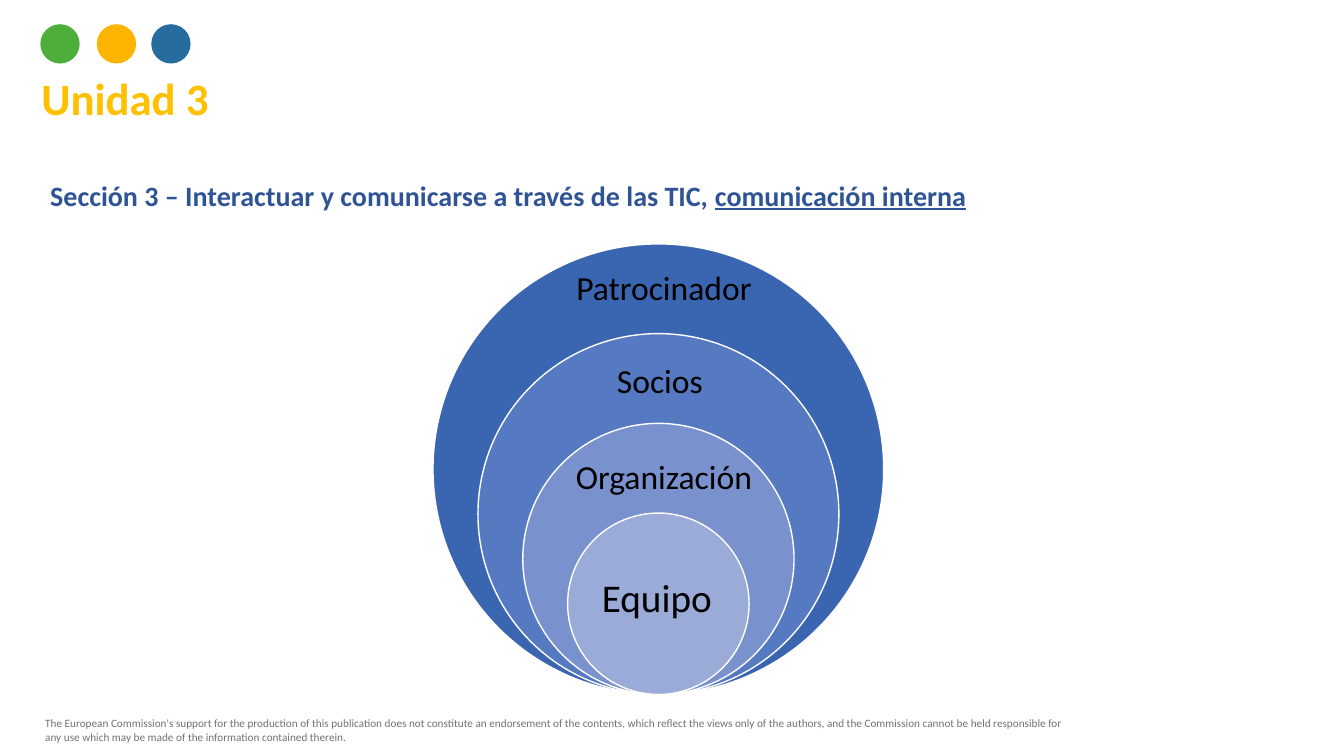
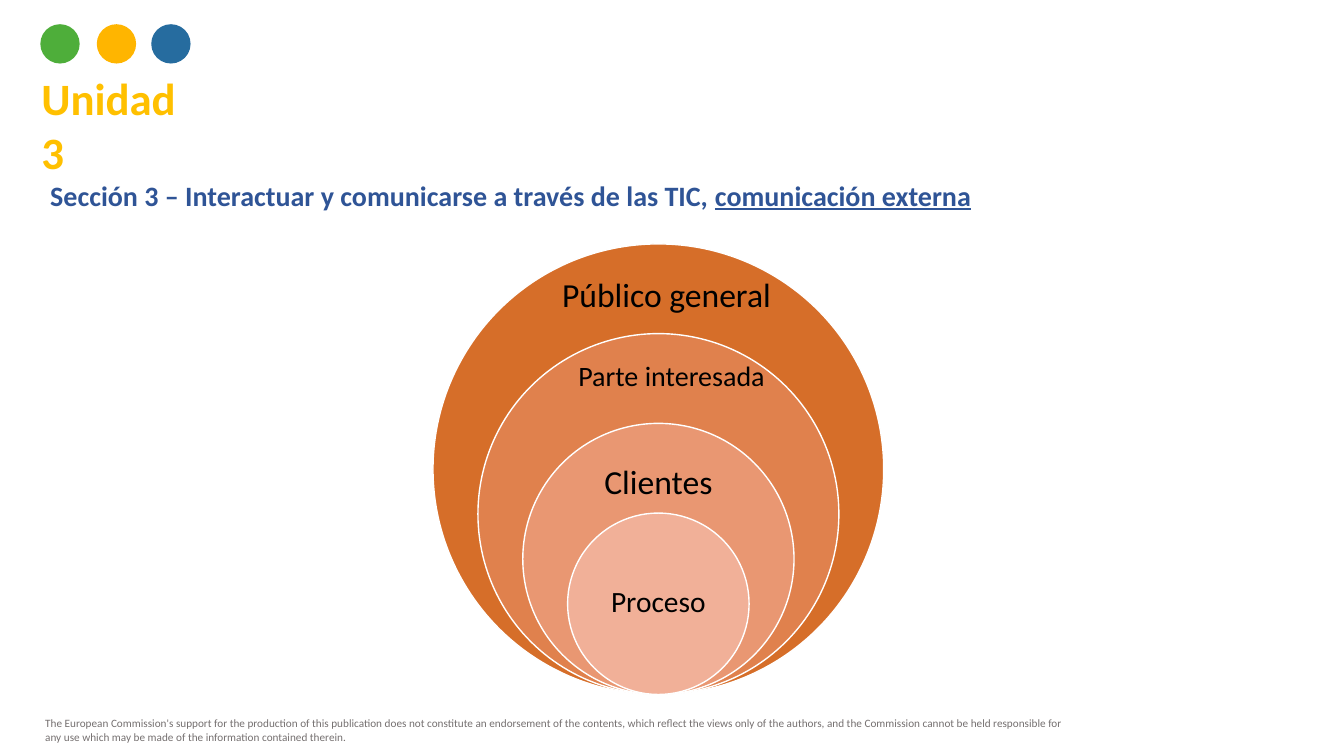
from pptx import Presentation
from pptx.dml.color import RGBColor
from pptx.enum.shapes import MSO_SHAPE
from pptx.enum.text import MSO_ANCHOR, MSO_AUTO_SIZE, PP_ALIGN
from pptx.util import Inches, Pt

FONT = "Calibri"
GOLD, NAVY, GREY, BLACK, WHITE = "FFC000", "2F5496", "757070", "000000", "FFFFFF"
DOTS = [(0.4, "4EAE3A"), (0.96, "FFB500"), (1.5, "266C9F")]
UNIT = "Unidad 3"
SECTION = "Sección 3 – Interactuar y comunicarse a través de las TIC, "
DISCLAIMER = (
    "The European Commission's support for the production of this publication does not "
    "constitute an endorsement of the contents, which reflect the views only of the authors, "
    "and the Commission cannot be held responsible for any use which may be made of the "
    "information contained therein."
)

RING_CENTER, RING_BOTTOM, RING_STEP, OUTER_DIAMETER = 6.53, 6.89, 0.89, 4.47

# Rings run from the outside in: fill, label, label left, top, width and text size.
INTERNAL = [
    ("3A66B1", "Patrocinador", 5.58, 2.6, 2.01, 24),
    ("567AC2", "Socios", 5.33, 3.52, 2.43, 24),
    ("7992CD", "Organización", 5.58, 4.47, 2.01, 24),
    ("9BABD7", "Equipo", 5.73, 5.64, 1.57, 28),
]
EXTERNAL = [
    ("D66E29", "Público general", 5.42, 2.67, 2.38, 24),
    ("E0814D", "Parte interesada", 5.6, 3.51, 2.12, 20),
    ("E99772", "Clientes", 5.47, 4.52, 2.12, 24),
    ("F1B098", "Proceso", 5.83, 5.74, 1.4, 21),
]


def color(hex_code):
    return RGBColor.from_string(hex_code)


class Deck:
    """Holds the shared style and the slide being built."""

    def __init__(self):
        self.presentation = Presentation()
        self.presentation.slide_width = Inches(13.33)
        self.presentation.slide_height = Inches(7.5)
        self.slide = None

    def new_slide(self, title_width, title_height):
        layout = self.presentation.slide_layouts.get_by_name("Title Only")
        self.slide = self.presentation.slides.add_slide(layout)
        title = self.slide.shapes.title
        title.left, title.top = Inches(0.31), Inches(0.65)
        title.width, title.height = Inches(title_width), Inches(title_height)
        self.set_text(title.text_frame, [UNIT], 32, GOLD, bold=True)
        self.text(0.35, 7.06, 10.46, 0.37, [DISCLAIMER], 8, GREY)
        for left, fill in DOTS:
            self.circle(left, 0.24, 0.39, fill)

    def set_text(self, frame, parts, size, hex_code, bold=False, align=PP_ALIGN.LEFT):
        """Fill a frame with one paragraph; parts after the first are underlined."""
        frame.word_wrap = True
        frame.auto_size = MSO_AUTO_SIZE.NONE
        frame.vertical_anchor = MSO_ANCHOR.TOP
        paragraph = frame.paragraphs[0]
        paragraph.alignment = align
        for index, part in enumerate(parts):
            run = paragraph.add_run()
            run.text = part
            run.font.name, run.font.size, run.font.bold = FONT, Pt(size), bold
            run.font.color.rgb = color(hex_code)
            if index:
                run.font.underline = True

    def text(self, left, top, width, height, parts, size, hex_code, **style):
        box = self.slide.shapes.add_textbox(
            Inches(left), Inches(top), Inches(width), Inches(height))
        self.set_text(box.text_frame, parts, size, hex_code, **style)

    def section(self, topic, width):
        self.text(0.4, 1.72, width, 0.44, [SECTION, topic], 20, NAVY,
                  bold=True, align=PP_ALIGN.JUSTIFY)

    def circle(self, left, top, diameter, fill, outline=None):
        circle = self.slide.shapes.add_shape(
            MSO_SHAPE.OVAL, Inches(left), Inches(top), Inches(diameter), Inches(diameter))
        circle.shadow.inherit = False
        circle.fill.solid()
        circle.fill.fore_color.rgb = color(fill)
        if outline:
            circle.line.color.rgb = color(outline)
            circle.line.width = Pt(1)
        else:
            circle.line.fill.background()

    def nested_rings(self, rings):
        """Draw circles that share their lowest point, each with a label."""
        for level, (fill, label, left, top, width, size) in enumerate(rings):
            diameter = OUTER_DIAMETER - level * RING_STEP
            self.circle(RING_CENTER - diameter / 2, RING_BOTTOM - diameter,
                        diameter, fill, WHITE)
            self.text(left, top, width, size / 60 + 0.1, [label], size, BLACK,
                      align=PP_ALIGN.CENTER)


def main():
    deck = Deck()

    deck.new_slide(title_width=1.93, title_height=0.64)
    deck.section("comunicación interna", 9.9)
    deck.nested_rings(INTERNAL)

    deck.new_slide(title_width=1.68, title_height=1.18)
    deck.section("comunicación externa", 12.26)
    deck.nested_rings(EXTERNAL)

    deck.presentation.save("out.pptx")


if __name__ == "__main__":
    main()
